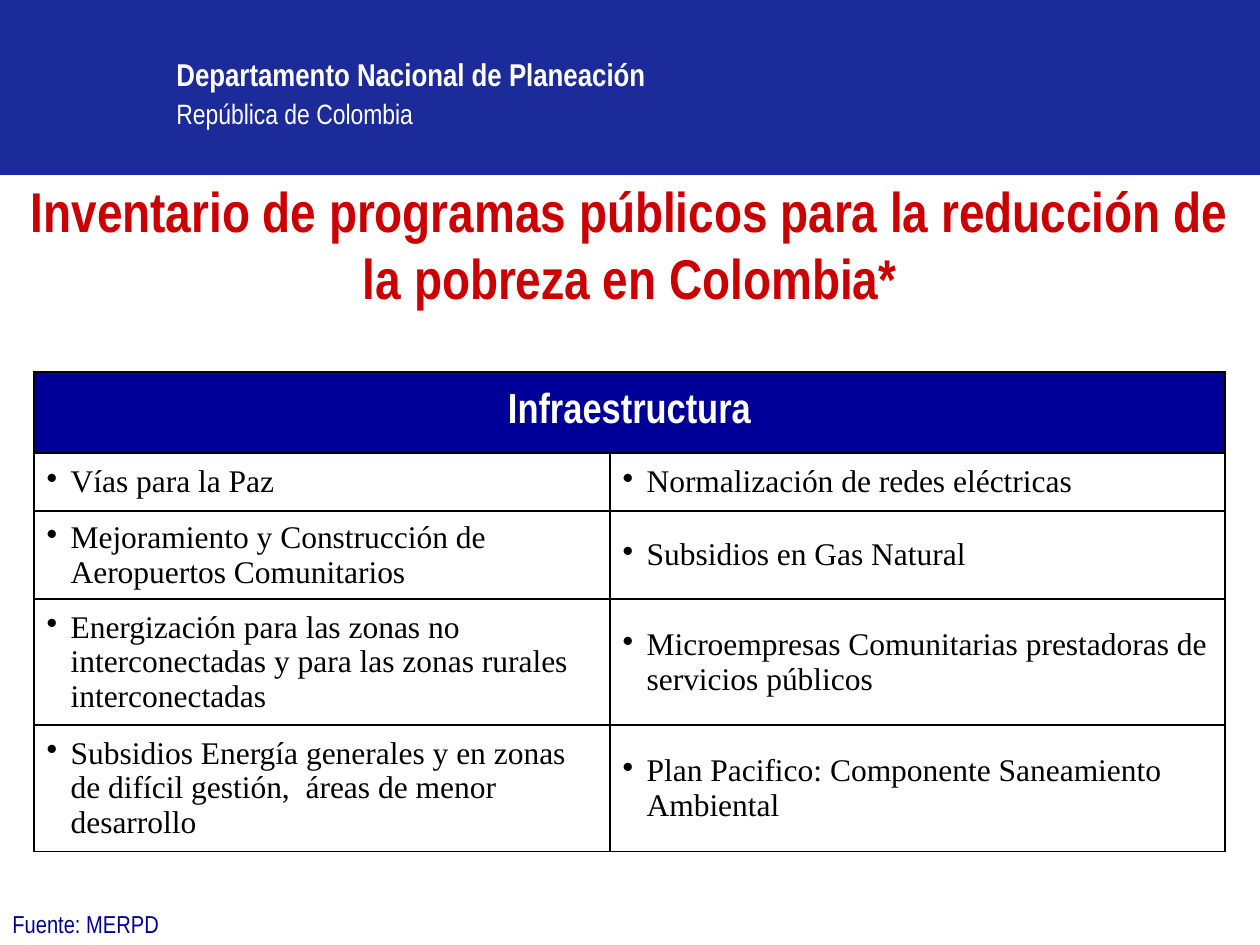
from lxml import etree
from pptx import Presentation
from pptx.dml.color import RGBColor
from pptx.enum.shapes import MSO_SHAPE
from pptx.enum.text import MSO_ANCHOR, PP_ALIGN
from pptx.oxml.ns import qn
from pptx.util import Emu, Pt

PX = 914400 // 126
RECTANGLE = MSO_SHAPE.RECTANGLE
TOP, MIDDLE = MSO_ANCHOR.TOP, MSO_ANCHOR.MIDDLE
CENTER = PP_ALIGN.CENTER
SANS, SERIF = "Arial Narrow", "Times New Roman"
COLORS = {
    "band": "1B2B9A",
    "title": "CC0000",
    "navy": "000099",
    "white": "FFFFFF",
    "black": "000000",
}
COLUMN_WIDTHS = (576, 615)
ROW_HEIGHTS = (81, 58, 83, 117, 117)
PROGRAMS = [
    ("Vías para la Paz", "Normalización de redes eléctricas"),
    ("Mejoramiento y Construcción de Aeropuertos Comunitarios",
     "Subsidios en Gas Natural"),
    ("Energización para las zonas no interconectadas y para las zonas rurales "
     "interconectadas",
     "Microempresas Comunitarias prestadoras de servicios públicos"),
    ("Subsidios Energía generales y en zonas de difícil gestión,  áreas de menor "
     "desarrollo",
     "Plan Pacifico: Componente Saneamiento Ambiental"),
]


def px(*lengths):
    return [Emu(length * PX) for length in lengths]


def rgb(name):
    return RGBColor.from_string(COLORS[name])


def style(paragraph, size, color, font=SANS, bold=False):
    for run in paragraph.runs:
        run.font.name = font
        run.font.size = Pt(size)
        run.font.bold = bold
        run.font.color.rgb = rgb(color)


def add_band(slide):
    band = slide.shapes.add_shape(RECTANGLE, *px(0, 0, 1260, 175))
    band.shadow.inherit = False
    band.fill.solid()
    band.fill.fore_color.rgb = rgb("band")
    band.line.fill.background()


def add_text(slide, box, text):
    frame = slide.shapes.add_textbox(*px(*box)).text_frame
    frame.word_wrap = True
    frame.text = text
    return frame.paragraphs


def add_letterhead(slide):
    department, country = add_text(
        slide, (164, 49, 588, 82),
        "Departamento Nacional de Planeación\nRepública de Colombia")
    style(department, 18, "white", bold=True)
    style(country, 16, "white")
    country.space_before = Pt(2)


def set_title(slide, text):
    title = slide.shapes.title
    title.left, title.top, title.width, title.height = px(0, 170, 1260, 146)
    frame = title.text_frame
    frame.word_wrap = True
    frame.vertical_anchor = TOP
    frame.text = text
    heading = frame.paragraphs[0]
    heading.alignment = CENTER
    style(heading, 32, "title", bold=True)


def add_source(slide):
    source = add_text(slide, (0, 900, 1260, 40), "Fuente: MERPD")[0]
    source.line_spacing = 1.1
    style(source, 14, "navy")


def set_borders(cell):
    """Draw the four cell edges; they must come before the cell's fill."""
    properties = cell._tc.get_or_add_tcPr()
    for position, side in enumerate(("a:lnL", "a:lnR", "a:lnT", "a:lnB")):
        edge = etree.Element(qn(side), w=str(Pt(1)))
        fill = etree.SubElement(edge, qn("a:solidFill"))
        etree.SubElement(fill, qn("a:srgbClr"), val=COLORS["black"])
        properties.insert(position, edge)


def add_bullet(paragraph):
    properties = paragraph._p.get_or_add_pPr()
    indent = 24 * PX
    properties.set("marL", str(indent))
    properties.set("indent", str(-indent))
    etree.SubElement(properties, qn("a:buChar"), char="•")


def fill_cell(cell, text, color):
    cell.fill.solid()
    cell.fill.fore_color.rgb = rgb(color)
    cell.vertical_anchor = MIDDLE
    cell.text = text
    return cell.text_frame.paragraphs[0]


def add_programs_table(slide):
    table = slide.shapes.add_table(
        len(ROW_HEIGHTS), len(COLUMN_WIDTHS),
        *px(34, 372, sum(COLUMN_WIDTHS), sum(ROW_HEIGHTS))).table
    for column, width in zip(table.columns, px(*COLUMN_WIDTHS)):
        column.width = width
    for row, height in zip(table.rows, px(*ROW_HEIGHTS)):
        row.height = height

    header = table.cell(0, 0)
    header.merge(table.cell(0, 1))
    category = fill_cell(header, "Infraestructura", "navy")
    category.alignment = CENTER
    style(category, 24, "white", bold=True)

    for row, programs in enumerate(PROGRAMS, start=1):
        for column, program in enumerate(programs):
            entry = fill_cell(table.cell(row, column), program, "white")
            add_bullet(entry)
            style(entry, 18, "black", SERIF)

    for cell in table.iter_cells():
        set_borders(cell)


def main():
    presentation = Presentation()
    presentation.slide_width, presentation.slide_height = px(1260, 945)
    slide = presentation.slides.add_slide(presentation.slide_layouts[5])
    add_band(slide)
    add_letterhead(slide)
    set_title(slide, "Inventario de programas públicos para la reducción de "
                     "la pobreza en Colombia*")
    add_source(slide)
    add_programs_table(slide)
    presentation.save("out.pptx")


if __name__ == "__main__":
    main()
